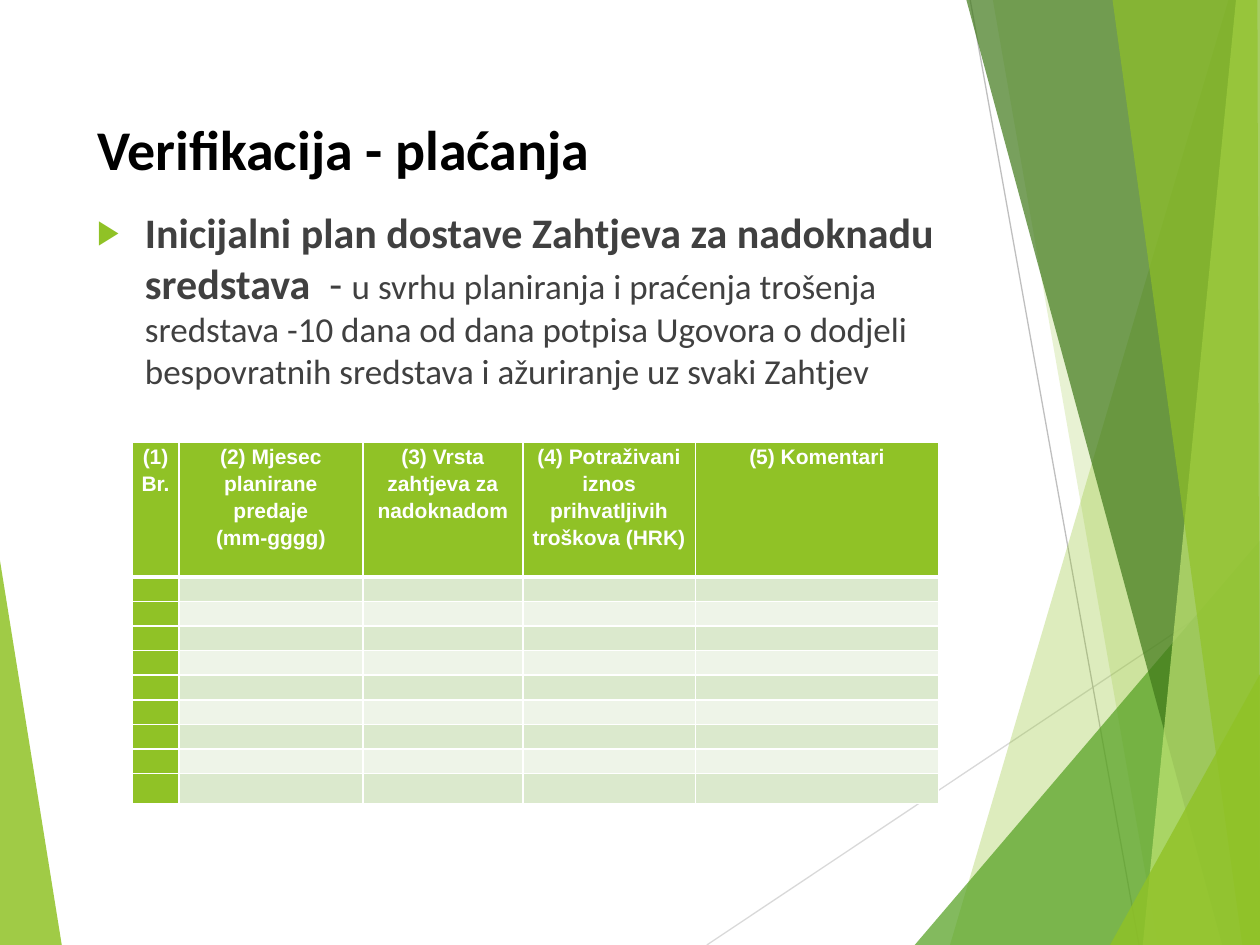
import pptx
import pptx.util
import pptx.dml.color
import pptx.enum.text
import pptx.oxml
import pptx.oxml.ns
from lxml import etree

Inches, Pt = pptx.util.Inches, pptx.util.Pt
COLORS = {"lime": "90C226", "green": "54A021", "forest": "3F7819", "pale": "C0E474",
          "band1": "DBE9CD", "band2": "EEF4E8", "white": "FFFFFF", "black": "000000",
          "text": "404040", "line1": "D9D9D9", "line2": "BFBFBF"}
LINES = [((5.61, 7.5), (10, 4.57), "line1"), ((7.7, 0), (9.04, 7.5), "line2")]
FACETS = [
    ([(0, 4.45), (0.49, 7.5), (0, 7.5)], "lime", 85),
    ([(9.75, 0), (7.54, 7.5), (10, 7.5), (10, 0)], "lime", 30),
    ([(7.88, 0), (9.19, 7.5), (10, 7.5), (10, 0)], "lime", 20),
    ([(7.26, 7.5), (10, 4.29), (10, 7.5)], "green", 72),
    ([(7.67, 0), (9.7, 7.5), (10, 7.5), (10, 0)], "forest", 70),
    ([(9.81, 0), (9.07, 7.5), (10, 7.5), (10, 0)], "pale", 70),
    ([(8.83, 0), (9.86, 7.5), (10, 7.5), (9.98, 0)], "lime", 65),
    ([(8.81, 7.5), (10, 5.35), (10, 7.5)], "lime", 80),
]
HEADERS = [["(1)", "Br."],
           ["(2) Mjesec", "planirane predaje", "(mm-gggg)"],
           ["(3) Vrsta", "zahtjeva za", "nadoknadom"],
           ["(4) Potraživani", "iznos prihvatljivih troškova (HRK)"],
           ["(5) Komentari"]]
COL_WIDTHS = [0.37, 1.46, 1.27, 1.37, 1.93]
ROW_HEIGHTS = [1.07] + [0.195] * 8 + [0.24]


def rgb(name):
    """Return the named colour."""
    return pptx.dml.color.RGBColor.from_string(COLORS[name])


def sub(parent, tag, **attrs):
    """Append a drawing element and return it."""
    return etree.SubElement(parent, pptx.oxml.ns.qn("a:" + tag), attrs)


def set_attrs(obj, fmt):
    """Set attributes from a dict."""
    for name, value in fmt.items():
        setattr(obj, name, value)


def add_run(p, text, size, font, color, bold):
    """Add a formatted run to a paragraph."""
    r = p.add_run()
    r.text = text
    set_attrs(r.font, {"size": Pt(size), "name": font, "bold": bold})
    r.font.color.rgb = rgb(color)


def add_line(s, start, end, color):
    """Draw a thin straight line."""
    c = s.shapes.add_connector(1, *map(Inches, start + end))
    c.line.color.rgb = rgb(color)
    c.line.width = Pt(0.75)
    sub(c.element.spPr, "effectLst")


def add_facet(s, points, color, alpha):
    """Draw a translucent polygon."""
    pts = [(Inches(x), Inches(y)) for x, y in points]
    fb = s.shapes.build_freeform(*pts[0])
    fb.add_line_segments(pts[1:])
    sp = fb.convert_to_shape()
    sp.shadow.inherit = False
    sp.fill.solid()
    sp.fill.fore_color.rgb = rgb(color)
    sp.line.fill.background()
    clr = sp.element.spPr.find(".//" + pptx.oxml.ns.qn("a:srgbClr"))
    sub(clr, "alpha", val=str(alpha * 1000))


def place(sp, left, top, width, height):
    """Position a placeholder in front of the shapes drawn so far."""
    box = dict(zip(("left", "top", "width", "height"), map(Inches, (left, top, width, height))))
    set_attrs(sp, box)
    sp.element.getparent().append(sp.element)
    return sp.text_frame


def fill_title(sp):
    """Write the slide title."""
    tf = place(sp, 0.67, 0.29, 7.21, 1.2)
    set_attrs(tf, {"word_wrap": True, "vertical_anchor": pptx.enum.text.MSO_ANCHOR.BOTTOM})
    p = tf.paragraphs[0]
    p.alignment = pptx.enum.text.PP_ALIGN.LEFT
    add_run(p, "Verifikacija - plaćanja", 32, "Calibri", "black", True)


def fill_body(sp):
    """Write the bulleted paragraph."""
    tf = place(sp, 0.67, 1.59, 7.21, 5.71)
    set_attrs(tf, {"word_wrap": True, "vertical_anchor": pptx.enum.text.MSO_ANCHOR.TOP})
    p = tf.paragraphs[0]
    p.space_before = Pt(0)
    pPr = p._p.get_or_add_pPr()
    set_indent = {"marL": Inches(0.38), "indent": Inches(-0.38)}
    for name, value in set_indent.items():
        pPr.set(name, str(value))
    sub(sub(pPr, "buClr"), "srgbClr", val=COLORS["lime"])
    sub(pPr, "buSzPct", val="80000")
    sub(pPr, "buFont", typeface="Arial")
    sub(pPr, "buChar", char="▶")
    for text, size, bold in [
            ("Inicijalni plan dostave Zahtjeva za nadoknadu sredstava ", 24, True),
            (" - ", 24, False),
            ("u svrhu planiranja i praćenja trošenja sredstava -10 dana od dana potpisa "
             "Ugovora o dodjeli bespovratnih sredstava i ažuriranje uz svaki Zahtjev", 20, False)]:
        add_run(p, text, size, "Calibri", "text", bold)


def format_cell(cell, fill, top, bottom):
    """Set a cell's margins, white borders and fill."""
    set_attrs(cell, {"margin_left": Inches(0.07), "margin_right": Inches(0.07),
                     "margin_top": 0, "margin_bottom": 0})
    tcPr = cell._tc.get_or_add_tcPr()
    for tag, width in (("lnL", 1), ("lnR", 1), ("lnT", top), ("lnB", bottom)):
        ln = sub(tcPr, tag, w=str(Pt(width)))
        sub(sub(ln, "solidFill"), "srgbClr", val=COLORS["white"])
    cell.fill.solid()
    cell.fill.fore_color.rgb = rgb(fill)


def write_header(cell, lines):
    """Write the centred lines of a header cell."""
    tf = cell.text_frame
    for i, text in enumerate(lines):
        p = tf.add_paragraph() if i else tf.paragraphs[0]
        set_attrs(p, {"alignment": pptx.enum.text.PP_ALIGN.CENTER, "line_spacing": 1.15})
        add_run(p, text, 12, "Arial", "white", True)


def add_plan_table(s):
    """Add the empty plan form with its header row."""
    tbl = s.shapes.add_table(len(ROW_HEIGHTS), len(COL_WIDTHS), Inches(1.05), Inches(3.51),
                             Inches(sum(COL_WIDTHS)), Inches(sum(ROW_HEIGHTS))).table
    set_attrs(tbl, {"first_col": True})
    for col, width in zip(tbl.columns, COL_WIDTHS):
        col.width = Inches(width)
    for i, height in enumerate(ROW_HEIGHTS):
        tbl.rows[i].height = Inches(height)
        for j, lines in enumerate(HEADERS):
            cell = tbl.cell(i, j)
            band = "band1" if i % 2 else "band2"
            fill = "lime" if i == 0 or j == 0 else band
            format_cell(cell, fill, 3 if i == 1 else 1, 3 if i == 0 else 1)
            if i == 0:
                write_header(cell, lines)
            else:
                sub(cell.text_frame.paragraphs[0]._p, "endParaRPr", sz="800")


def main():
    """Build and save the slide."""
    prs = pptx.Presentation()
    set_attrs(prs, {"slide_width": Inches(10), "slide_height": Inches(7.5)})
    s = prs.slides.add_slide(prs.slide_layouts[1])
    add_facet(s, *FACETS[0])
    for line in LINES:
        add_line(s, *line)
    for facet in FACETS[1:]:
        add_facet(s, *facet)
    fill_title(s.shapes.title)
    fill_body(s.placeholders[1])
    add_plan_table(s)
    prs.save("out.pptx")


if __name__ == "__main__":
    main()
